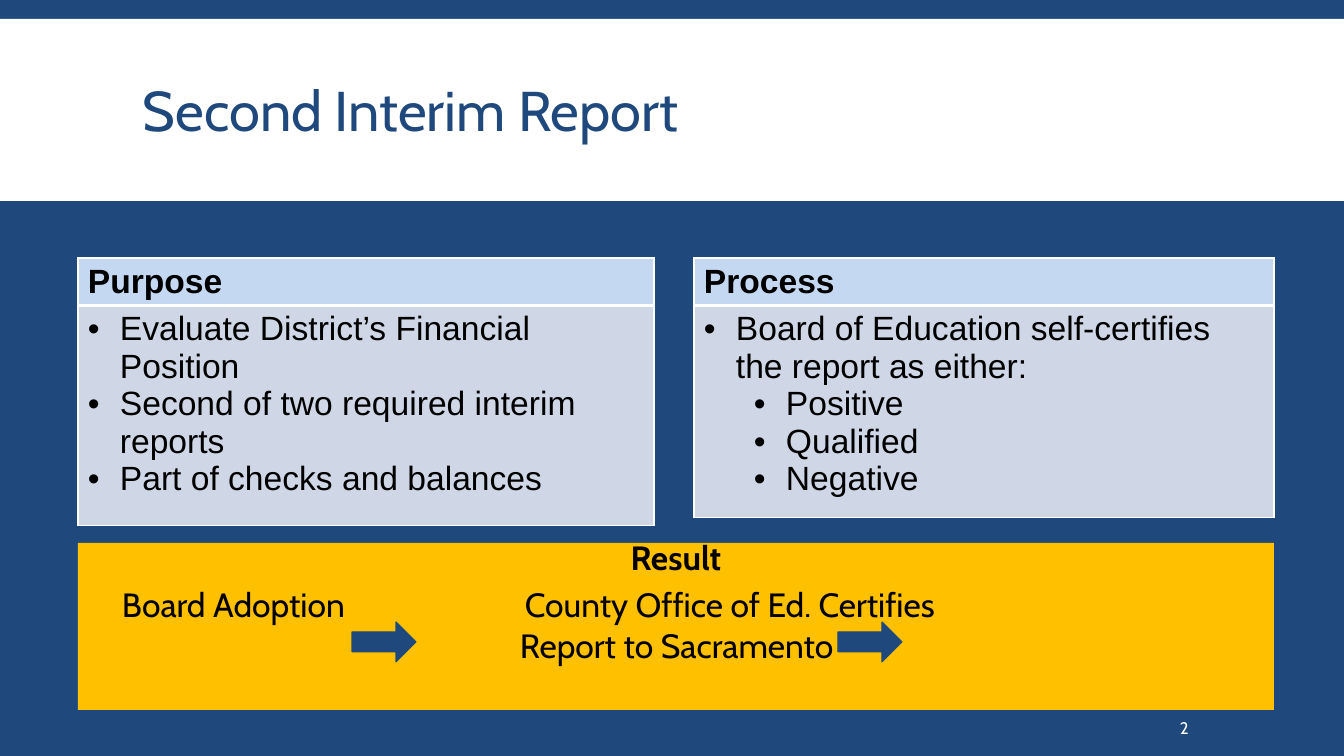
"""Builds the Second Interim Report slide."""
from lxml import etree
from pptx import Presentation
from pptx.dml.color import RGBColor
from pptx.enum.shapes import MSO_SHAPE
from pptx.enum.text import MSO_ANCHOR, PP_ALIGN
from pptx.oxml.ns import qn
from pptx.util import Emu, Pt

RECTANGLE, RIGHT_ARROW = MSO_SHAPE.RECTANGLE, MSO_SHAPE.RIGHT_ARROW
MIDDLE, BOTTOM = MSO_ANCHOR.MIDDLE, MSO_ANCHOR.BOTTOM
LEFT, CENTER = PP_ALIGN.LEFT, PP_ALIGN.CENTER

NAVY, WHITE, BLACK, GOLD = "1F497D", "FFFFFF", "000000", "FFC000"
HEADER_FILL, BODY_FILL = "C5D8F1", "CFD7E7"
HEADING_FONT, TABLE_FONT = "Cabin", "Arial"
EMU_PER_PX = 914400 / 100.8

TITLE = "Second Interim Report"
PAGE_NUMBER = "2"
TABLES = [
    {"left": 78, "width": 576, "body_height": 220, "heading": "Purpose",
     "bullets": [(0, "Evaluate District’s Financial Position"),
                 (0, "Second of two required interim reports"),
                 (0, "Part of checks and balances")]},
    {"left": 694, "width": 580, "body_height": 212, "heading": "Process",
     "bullets": [(0, "Board of Education self-certifies the report as either:"),
                 (1, "Positive"), (1, "Qualified"), (1, "Negative")]},
]
TABLE_TOP, HEADER_HEIGHT = 258, 47
BULLET_INDENT, LEVEL_STEP = 32, 50
RESULT_HEADING = "Result"
FIRST_STEPS = "Board Adoption\tCounty Office of Ed. Certifies"
LAST_STEP = "Report to Sacramento"
RESULT_BOX = (78, 543, 1196, 167)
RESULT_INSET, STEP_TAB, LAST_STEP_INDENT = 44, 403, 398
ARROW_LEFTS = [352, 838]
ARROW_TOP, ARROW_WIDTH, ARROW_HEIGHT = 622, 64, 40


def px(length):
    return Emu(round(length * EMU_PER_PX))


def color(value):
    return RGBColor.from_string(value)


def place(shape, left, top, width, height):
    shape.left, shape.top, shape.width, shape.height = map(px, (left, top, width, height))


def set_insets(frame, left, top, right, bottom):
    frame.margin_left, frame.margin_top = px(left), px(top)
    frame.margin_right, frame.margin_bottom = px(right), px(bottom)


def add_text(paragraph, text, size, font, text_color, bold=False):
    run = paragraph.add_run()
    run.text = text
    run.font.size, run.font.name, run.font.bold = Pt(size), font, bold
    run.font.color.rgb = color(text_color)


def add_block(slide, kind, box, fill, line=None):
    shape = slide.shapes.add_shape(kind, *map(px, box))
    shape.shadow.inherit = False
    shape.fill.solid()
    shape.fill.fore_color.rgb = color(fill)
    if line:
        shape.line.color.rgb = color(line)
        shape.line.width = Pt(0.75)
    else:
        shape.line.fill.background()
    return shape


def format_cell(cell, fill, bottom_width):
    set_insets(cell, 10, 5, 10, 5)
    properties = cell._tc.get_or_add_tcPr()
    for side, width in (("L", 1), ("R", 1), ("T", 1), ("B", bottom_width)):
        border = etree.SubElement(properties, qn("a:ln" + side), w=str(Pt(width)))
        solid = etree.SubElement(border, qn("a:solidFill"))
        etree.SubElement(solid, qn("a:srgbClr"), val=WHITE)
    cell.fill.solid()
    cell.fill.fore_color.rgb = color(fill)


def add_bullet(paragraph, level):
    paragraph.level = level
    properties = paragraph._p.get_or_add_pPr()
    properties.set("marL", str(px(BULLET_INDENT + LEVEL_STEP * level)))
    properties.set("indent", str(px(-BULLET_INDENT)))
    bullet_color = etree.SubElement(properties, qn("a:buClr"))
    etree.SubElement(bullet_color, qn("a:srgbClr"), val=BLACK)
    etree.SubElement(properties, qn("a:buFont"), typeface=TABLE_FONT)
    etree.SubElement(properties, qn("a:buChar"), char="•")


def add_report_table(slide, content):
    row_heights = (HEADER_HEIGHT, content["body_height"])
    box = (content["left"], TABLE_TOP, content["width"], sum(row_heights))
    table = slide.shapes.add_table(2, 1, *map(px, box)).table
    table.first_row = table.horz_banding = False
    for row, height in zip(table.rows, row_heights):
        row.height = px(height)
    header, body = table.cell(0, 0), table.cell(1, 0)
    format_cell(header, HEADER_FILL, 3)
    format_cell(body, BODY_FILL, 1)
    add_text(header.text_frame.paragraphs[0], content["heading"], 24, TABLE_FONT, BLACK, True)
    for index, (level, text) in enumerate(content["bullets"]):
        frame = body.text_frame
        paragraph = frame.add_paragraph() if index else frame.paragraphs[0]
        add_bullet(paragraph, level)
        add_text(paragraph, text, 24, TABLE_FONT, BLACK)


def add_title(slide):
    band = add_block(slide, RECTANGLE, (0, 19, 1344, 182), WHITE)
    title = slide.shapes.title
    title.element.addprevious(band.element)
    place(title, 133, 31, 1079, 166)
    frame = title.text_frame
    frame.vertical_anchor, frame.word_wrap = MIDDLE, True
    set_insets(frame, 10, 5, 10, 5)
    paragraph = frame.paragraphs[0]
    paragraph.alignment, paragraph.line_spacing = LEFT, 0.85
    add_text(paragraph, TITLE, 40, HEADING_FONT, NAVY)


def add_result(slide):
    frame = add_block(slide, RECTANGLE, RESULT_BOX, GOLD).text_frame
    frame.vertical_anchor, frame.word_wrap = BOTTOM, True
    set_insets(frame, RESULT_INSET, 0, RESULT_INSET, 45)
    heading, first, last = frame.paragraphs[0], frame.add_paragraph(), frame.add_paragraph()
    heading.alignment = CENTER
    first.alignment = last.alignment = LEFT
    first.space_before = Pt(4.8)
    tabs = etree.SubElement(first._p.get_or_add_pPr(), qn("a:tabLst"))
    etree.SubElement(tabs, qn("a:tab"), pos=str(px(STEP_TAB)), algn="l")
    last._p.get_or_add_pPr().set("marL", str(px(LAST_STEP_INDENT)))
    add_text(heading, RESULT_HEADING, 24, HEADING_FONT, BLACK, True)
    add_text(first, FIRST_STEPS, 24, HEADING_FONT, BLACK)
    add_text(last, LAST_STEP, 24, HEADING_FONT, BLACK)


def add_page_number(slide):
    frame = slide.shapes.add_textbox(*map(px, (1175, 708, 104, 40))).text_frame
    frame.vertical_anchor, frame.word_wrap = MIDDLE, True
    set_insets(frame, 5, 5, 10, 5)
    add_text(frame.paragraphs[0], PAGE_NUMBER, 12, HEADING_FONT, WHITE)


def main():
    presentation = Presentation()
    presentation.slide_width, presentation.slide_height = px(1344), px(756)
    slide = presentation.slides.add_slide(presentation.slide_layouts[5])
    slide.background.fill.solid()
    slide.background.fill.fore_color.rgb = color(NAVY)
    add_title(slide)
    for content in TABLES:
        add_report_table(slide, content)
    add_result(slide)
    add_page_number(slide)
    for left in ARROW_LEFTS:
        add_block(slide, RIGHT_ARROW, (left, ARROW_TOP, ARROW_WIDTH, ARROW_HEIGHT), NAVY, NAVY)
    presentation.save("out.pptx")


if __name__ == "__main__":
    main()
